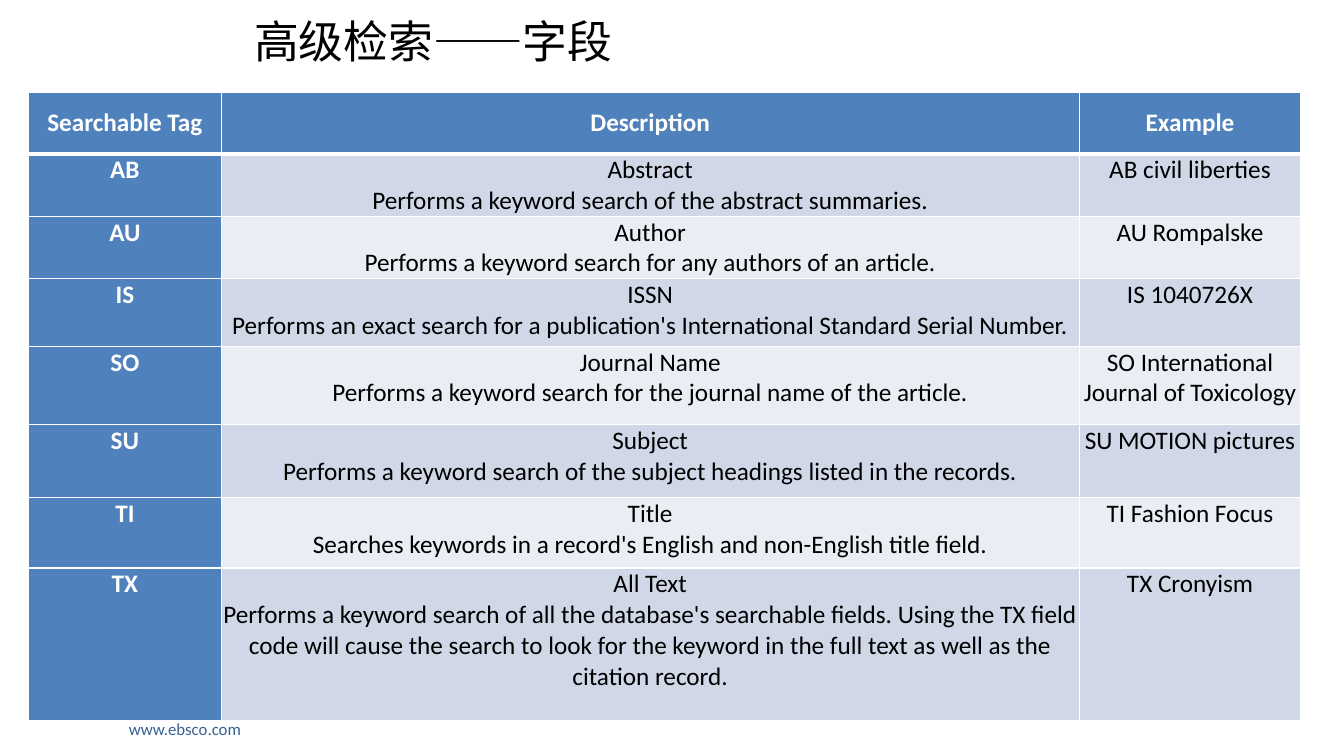
from pptx import Presentation
from pptx.dml.color import RGBColor
from pptx.enum.text import MSO_ANCHOR, MSO_AUTO_SIZE, PP_ALIGN
from pptx.oxml.ns import qn
from pptx.util import Inches, Pt
from lxml.etree import SubElement

WIDTH, HEIGHT = Inches(13.33), Inches(7.5)
COLORS = {
    "black": "000000",
    "white": "FFFFFF",
    "header": "4F81BD",
    "odd_row": "D0D8E8",
    "even_row": "E9EDF4",
    "address": "376092",
}
COLUMN_SHARES = [1.91, 8.51, 2.2]
ROW_SHARES = [0.61, 0.61, 0.61, 0.67, 0.78, 0.72, 0.7, 1.51]
HEADINGS = ["Searchable Tag", "Description", "Example"]
FIELDS = [
    ("AB", "Abstract\nPerforms a keyword search of the abstract summaries.", "AB civil liberties"),
    ("AU", "Author\nPerforms a keyword search for any authors of an article.", "AU Rompalske"),
    ("IS", "ISSN\nPerforms an exact search for a publication's International Standard Serial Number.",
     "IS 1040726X"),
    ("SO", "Journal Name\nPerforms a keyword search for the journal name of the article.",
     "SO International Journal of Toxicology"),
    ("SU", "Subject\nPerforms a keyword search of the subject headings listed in the records.",
     "SU MOTION pictures"),
    ("TI", "Title\nSearches keywords in a record's English and non-English title field.",
     "TI Fashion Focus"),
    ("TX", "All Text\nPerforms a keyword search of all the database's searchable fields. "
     "Using the TX field code will cause the search to look for the keyword in the full text "
     "as well as the citation record.", "TX Cronyism"),
]


def box(left, top, width, height):
    return (int(WIDTH * left / 100), int(HEIGHT * top / 100),
            int(WIDTH * width / 100), int(HEIGHT * height / 100))


def color(name):
    return RGBColor.from_string(COLORS[name])


def style_text(tf, size, name, bold=False, align=PP_ALIGN.LEFT, font="Calibri"):
    for p in tf.paragraphs:
        p.alignment = align
        p.font.size = Pt(size)
        p.font.name = font
        p.font.bold = bold
        p.font.color.rgb = color(name)


def add_border(cell, side, points):
    ln = SubElement(cell._tc.get_or_add_tcPr(), qn(f"a:{side}"), w=str(Pt(points)))
    fill = SubElement(ln, qn("a:solidFill"))
    SubElement(fill, qn("a:srgbClr"), val=COLORS["white"])


def format_cell(cell, text, row, col):
    strong = row == 0 or col == 0
    cell.text = text
    cell.margin_left = cell.margin_right = Inches(0.01)
    cell.margin_top = cell.margin_bottom = Inches(0.01)
    cell.vertical_anchor = MSO_ANCHOR.MIDDLE if row == 0 else MSO_ANCHOR.TOP
    style_text(cell.text_frame, 18, "white" if strong else "black", strong, PP_ALIGN.CENTER)
    for side, points in (("lnL", 1), ("lnR", 1), ("lnT", 3 if row == 1 else 1),
                         ("lnB", 3 if row == 0 else 1)):
        add_border(cell, side, points)
    cell.fill.solid()
    cell.fill.fore_color.rgb = color("header" if strong else "odd_row" if row % 2 else "even_row")


def add_field_table(s, left, top, width, height):
    rows = [HEADINGS, *FIELDS]
    frame = s.shapes.add_table(len(rows), len(HEADINGS), *box(left, top, width, height))
    table = frame.table
    table.horz_banding = False
    full_width, full_height = frame.width, frame.height
    for column, share in zip(table.columns, COLUMN_SHARES):
        column.width = int(full_width * share / sum(COLUMN_SHARES))
    for line, share in zip(table.rows, ROW_SHARES):
        line.height = int(full_height * share / sum(ROW_SHARES))
    for row, texts in enumerate(rows):
        for col, text in enumerate(texts):
            format_cell(table.cell(row, col), text, row, col)


def add_title(s, text, left, top, width, height):
    title = s.shapes.title
    title.left, title.top, title.width, title.height = box(left, top, width, height)
    tf = title.text_frame
    tf.text = text
    tf.auto_size = MSO_AUTO_SIZE.NONE
    tf.vertical_anchor = MSO_ANCHOR.MIDDLE
    style_text(tf, 32, "black", font="Arial")


def add_address(s, text, left, top, width, height):
    tf = s.shapes.add_textbox(*box(left, top, width, height)).text_frame
    tf.text = text
    tf.word_wrap = False
    style_text(tf, 12, "address")


def main():
    prs = Presentation()
    prs.slide_width, prs.slide_height = WIDTH, HEIGHT
    s = prs.slides.add_slide(prs.slide_layouts[5])
    add_address(s, "www.ebsco.com", 8.85, 94.4, 9.98, 4)
    add_field_table(s, 2.13, 12.2, 94.67, 82.8)
    add_title(s, "高级检索——字段", 18.15, 1.07, 50.64, 8.67)
    prs.save("out.pptx")


if __name__ == "__main__":
    main()
